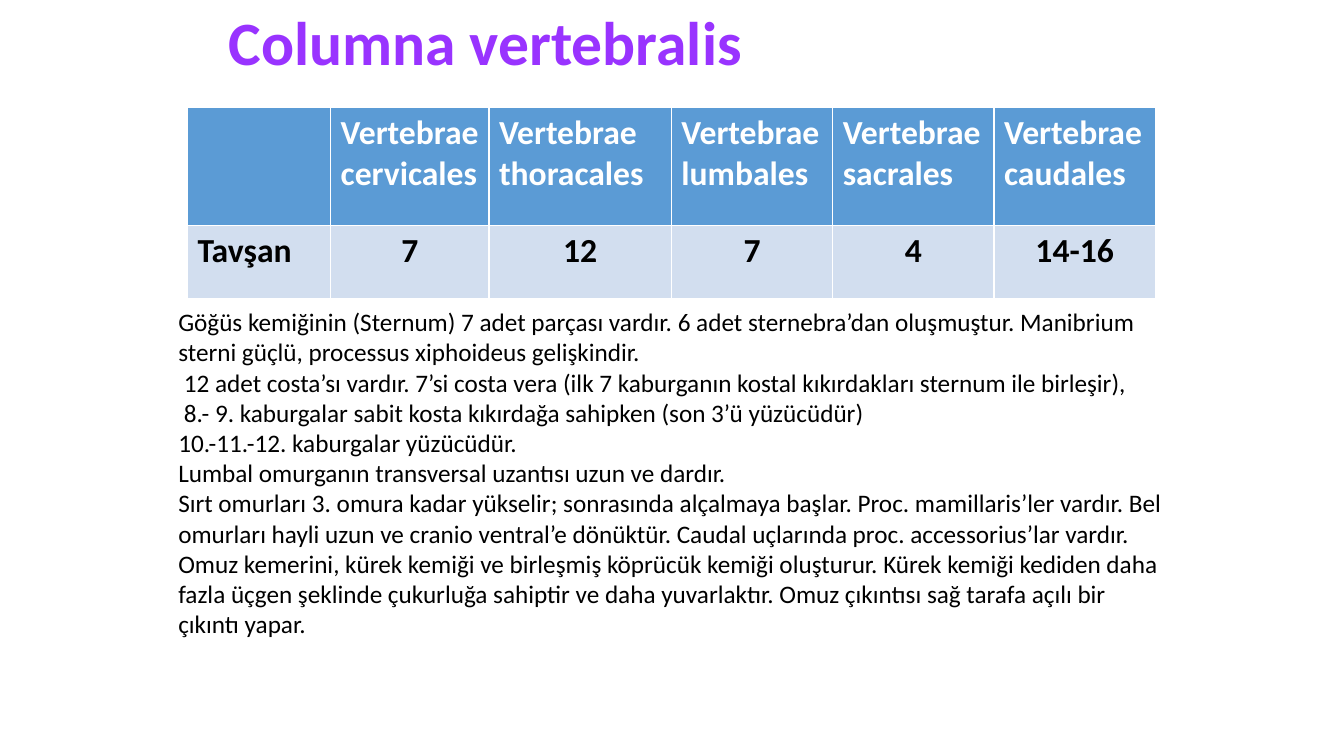
from dataclasses import dataclass

from lxml import etree
from pptx import Presentation
from pptx.dml.color import RGBColor
from pptx.enum.text import MSO_ANCHOR, PP_ALIGN
from pptx.oxml.ns import qn
from pptx.util import Inches, Pt

LEFT, CENTER = PP_ALIGN.LEFT, PP_ALIGN.CENTER
TOP, MIDDLE = MSO_ANCHOR.TOP, MSO_ANCHOR.MIDDLE
FONT = "Calibri"
BLACK, WHITE, PURPLE = "000000", "FFFFFF", "9933FF"
BLUE, PALE_BLUE = "5B9BD5", "D2DEEF"


@dataclass
class TextBlock:
    left: float
    top: float
    width: float
    height: float
    paragraphs: list[str]
    size: int
    color: str = BLACK
    bold: bool = False
    anchor: MSO_ANCHOR = TOP
    spacing: float = 1.0


@dataclass
class TableRow:
    height: float
    texts: list[str]
    fill: str
    color: str
    align: PP_ALIGN


TITLE = TextBlock(2.17, 0, 9, 0.91, ["Columna vertebralis"], 44, PURPLE, True, MIDDLE, 0.9)
BODY = TextBlock(1.67, 2.99, 10, 4.5, [
    "Göğüs kemiğinin (Sternum) 7 adet parçası vardır. 6 adet sternebra’dan oluşmuştur. "
    "Manibrium sterni güçlü, processus xiphoideus gelişkindir.",
    " 12 adet costa’sı vardır. 7’si costa vera (ilk 7 kaburganın kostal kıkırdakları "
    "sternum ile birleşir),",
    " 8.- 9. kaburgalar sabit kosta kıkırdağa sahipken (son 3’ü yüzücüdür)",
    "10.-11.-12. kaburgalar yüzücüdür.",
    "Lumbal omurganın transversal uzantısı uzun ve dardır.",
    "Sırt omurları 3. omura kadar yükselir; sonrasında alçalmaya başlar. "
    "Proc. mamillaris’ler vardır. Bel omurları hayli uzun ve cranio ventral’e dönüktür. "
    "Caudal uçlarında proc. accessorius’lar vardır. Omuz kemerini, kürek kemiği ve "
    "birleşmiş köprücük kemiği oluşturur. Kürek kemiği kediden daha fazla üçgen şeklinde "
    "çukurluğa sahiptir ve daha yuvarlaktır. Omuz çıkıntısı sağ tarafa açılı bir çıkıntı yapar.",
], 18)

REGIONS = ["cervicales", "thoracales", "lumbales", "sacrales", "caudales"]
COL_WIDTHS = [1.42, 1.57, 1.81, 1.6, 1.6, 1.6]
ROWS = [
    TableRow(1.17, [""] + [f"Vertebrae {region}" for region in REGIONS], BLUE, WHITE, LEFT),
    TableRow(0.72, ["Tavşan", "7", "12", "7", "4", "14-16"], PALE_BLUE, BLACK, CENTER),
]


def rgb(color: str) -> RGBColor:
    return RGBColor.from_string(color)


def write(p, text: str, *, size: int, color: str = BLACK, bold: bool = False,
          align: PP_ALIGN = LEFT, spacing: float = 1.0) -> None:
    p.alignment = align
    p.line_spacing = spacing
    p.font.size = Pt(size)
    if not text:
        return
    r = p.add_run()
    r.text = text
    r.font.name = FONT
    r.font.size = Pt(size)
    r.font.bold = bold
    r.font.color.rgb = rgb(color)


def add_text(s, block: TextBlock) -> None:
    sp = s.shapes.add_textbox(Inches(block.left), Inches(block.top),
                              Inches(block.width), Inches(block.height))
    tf = sp.text_frame
    tf.word_wrap = True
    tf.vertical_anchor = block.anchor
    for i, text in enumerate(block.paragraphs):
        p = tf.add_paragraph() if i else tf.paragraphs[0]
        write(p, text, size=block.size, color=block.color, bold=block.bold,
              spacing=block.spacing)


def set_borders(cell, color: str, width: float) -> None:
    tc_pr = cell._tc.get_or_add_tcPr()
    for side in ("lnL", "lnR", "lnT", "lnB"):
        ln = etree.SubElement(tc_pr, qn(f"a:{side}"), w=str(Pt(width)))
        fill = etree.SubElement(ln, qn("a:solidFill"))
        etree.SubElement(fill, qn("a:srgbClr"), val=color)


def add_vertebrae_table(s, left: float, top: float, rows: list[TableRow]) -> None:
    table = s.shapes.add_table(
        len(rows), len(COL_WIDTHS), Inches(left), Inches(top),
        Inches(sum(COL_WIDTHS)), Inches(sum(row.height for row in rows))).table
    for column, width in zip(table.columns, COL_WIDTHS):
        column.width = Inches(width)
    for i, row in enumerate(rows):
        table.rows[i].height = Inches(row.height)
        for j, text in enumerate(row.texts):
            cell = table.cell(i, j)
            set_borders(cell, WHITE, 1)
            cell.fill.solid()
            cell.fill.fore_color.rgb = rgb(row.fill)
            write(cell.text_frame.paragraphs[0], text, size=24, color=row.color,
                  bold=True, align=row.align if j else LEFT)


def main() -> None:
    prs = Presentation()
    prs.slide_width, prs.slide_height = Inches(13.33), Inches(7.5)
    s = prs.slides.add_slide(prs.slide_layouts[6])

    # Title, vertebra counts, notes on the skeleton
    add_text(s, TITLE)
    add_vertebrae_table(s, 1.86, 1.07, ROWS)
    add_text(s, BODY)

    prs.save("out.pptx")


if __name__ == "__main__":
    main()
